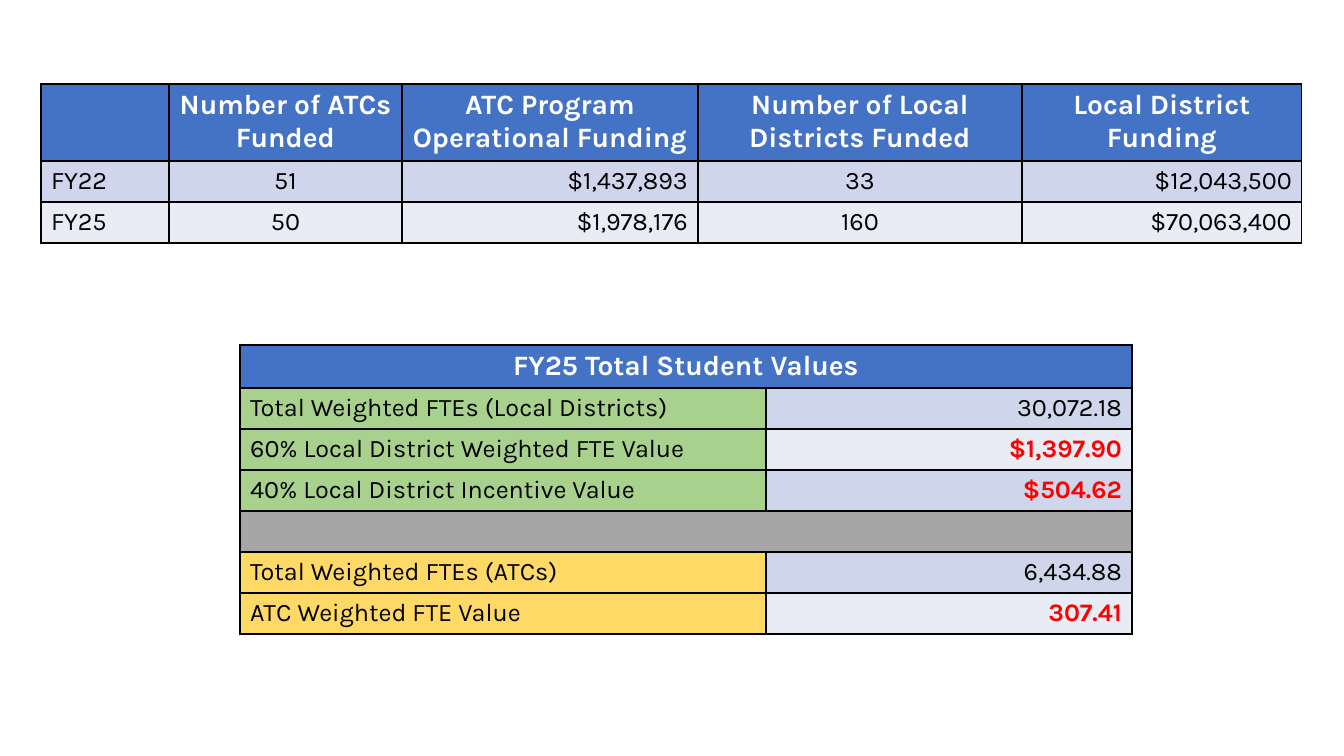
from lxml import etree
from pptx import Presentation
from pptx import util as u
from pptx.dml.color import RGBColor
from pptx.enum import text
from pptx.oxml import ns

PX = 914400 / 100.8
FONT = "Karla"
HEX = {
    "head": "4472C4", "dark": "CFD5EA", "light": "E9EBF5",
    "green": "A9D18E", "gold": "FFD966", "gray": "A6A6A6",
    "black": "000000", "white": "FFFFFF", "red": "FF0000",
}
ALIGN = {
    "l": text.PP_ALIGN.LEFT,
    "c": text.PP_ALIGN.CENTER,
    "r": text.PP_ALIGN.RIGHT,
}

# Each row: fills of its cells, then their texts
VALUES = {
    "at": (240, 345),
    "cols": (526, 366),
    "rows": (43,) + (41,) * 6,
    "align": "lr",
    "cells": [
        (("head", "head"), ("FY25 Total Student Values", None)),
        (("green", "dark"), ("Total Weighted FTEs (Local Districts)", "30,072.18")),
        (("green", "light"), ("60% Local District Weighted FTE Value", "$1,397.90")),
        (("green", "dark"), ("40% Local District Incentive Value", "$504.62")),
        (("gray", "gray"), ("", None)),
        (("gold", "dark"), ("Total Weighted FTEs (ATCs)", "6,434.88")),
        (("gold", "light"), ("ATC Weighted FTE Value", "307.41")),
    ],
    "red": ("$1,397.90", "$504.62", "307.41"),
}
FUNDING = {
    "at": (41, 84),
    "cols": (128, 233, 296, 324, 280),
    "rows": (77, 41, 41),
    "align": "lcrcr",
    "cells": [
        (("head",) * 5, ("", "Number of ATCs Funded", "ATC Program Operational Funding",
                         "Number of Local\nDistricts Funded", "Local District Funding")),
        (("dark",) * 5, ("FY22", "51", "$1,437,893", "33", "$12,043,500")),
        (("light",) * 5, ("FY25", "50", "$1,978,176", "160", "$70,063,400")),
    ],
    "red": (),
}


def px(n):
    return u.Emu(round(n * PX))


def write(cell, words, size=18, color="black", bold=False, align="l"):
    cell.text_frame.text = words
    for para in cell.text_frame.paragraphs:
        para.alignment = ALIGN[align]
        for run in para.runs:
            font = run.font
            font.name, font.size, font.bold = FONT, u.Pt(size), bold
            font.color.rgb = RGBColor.from_string(HEX[color])


def frame(cell):
    """Draw a thin black line on all four sides of a cell."""
    props = cell._tc.get_or_add_tcPr()
    for side in ("a:lnL", "a:lnR", "a:lnT", "a:lnB"):
        line = etree.SubElement(props, ns.qn(side), w=str(u.Pt(1)))
        fill = etree.SubElement(line, ns.qn("a:solidFill"))
        etree.SubElement(fill, ns.qn("a:srgbClr"), val=HEX["black"])


def build(slide, data):
    cols, rows = data["cols"], data["rows"]
    size = (sum(cols), sum(rows))
    table = slide.shapes.add_table(
        len(rows), len(cols), *map(px, data["at"] + size)).table
    table.first_row = table.horz_banding = False
    for col, width in zip(table.columns, cols):
        col.width = px(width)
    for row, height in zip(table.rows, rows):
        row.height = px(height)

    for r, (fills, words) in enumerate(data["cells"]):
        for c, (fill, word) in enumerate(zip(fills, words)):
            cell = table.cell(r, c)
            frame(cell)
            cell.fill.solid()
            cell.fill.fore_color.rgb = RGBColor.from_string(HEX[fill])
            if not word:
                continue
            if r == 0:
                write(cell, word, size=20, color="white", bold=True, align="c")
            else:
                hot = word in data["red"]
                write(cell, word, color="red" if hot else "black",
                      bold=hot, align=data["align"][c])
        if words[-1] is None:
            table.cell(r, 0).merge(table.cell(r, len(cols) - 1))


def main():
    deck = Presentation()
    deck.slide_width, deck.slide_height = px(1344), px(756)
    slide = deck.slides.add_slide(deck.slide_layouts[6])
    for data in (VALUES, FUNDING):
        build(slide, data)
    deck.save("out.pptx")


if __name__ == "__main__":
    main()
